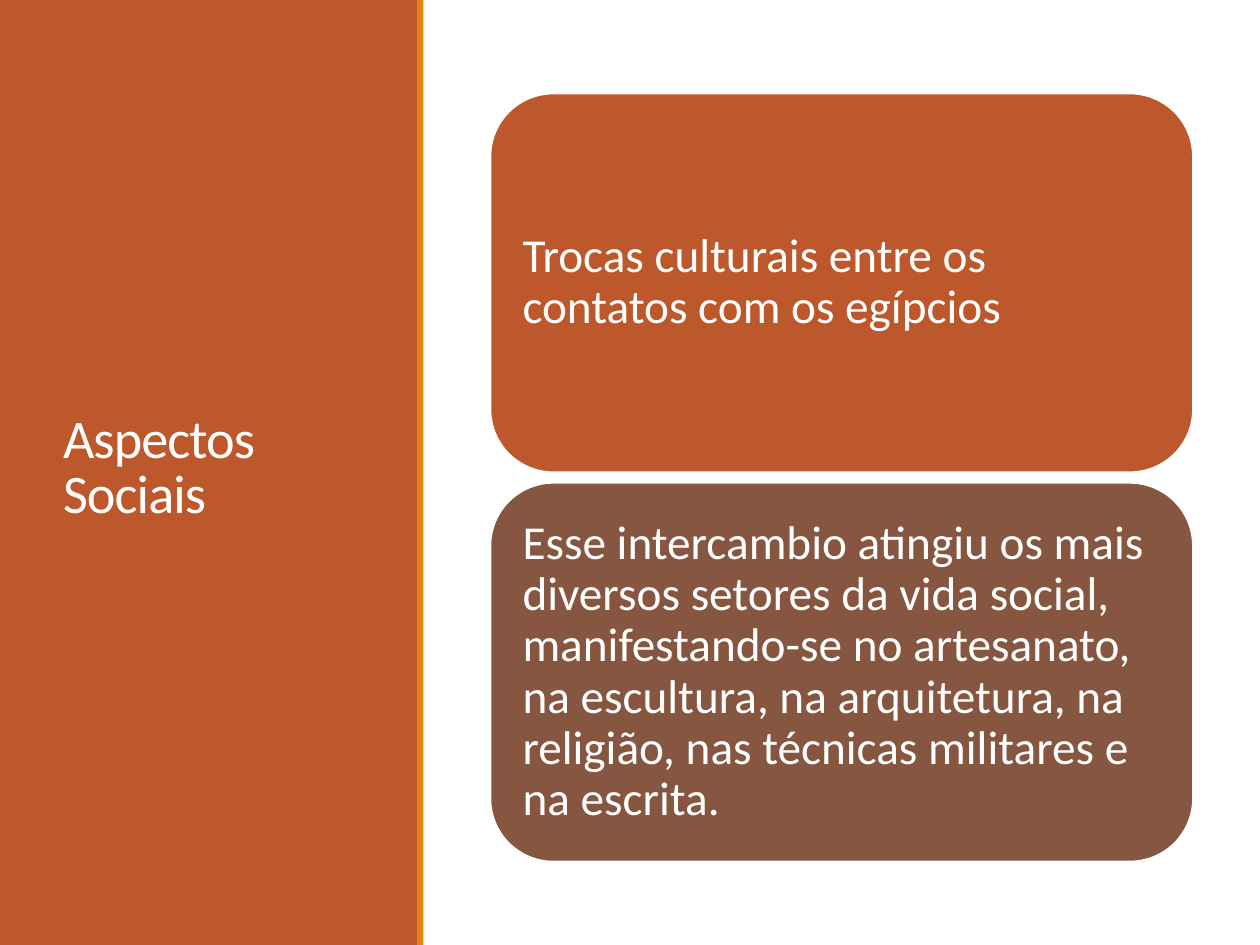
"""Build the slide on social aspects."""
from pptx import Presentation
from pptx.dml.color import RGBColor
from pptx.enum.shapes import MSO_SHAPE
from pptx.enum.text import MSO_ANCHOR, PP_ALIGN
from pptx.util import Inches, Pt

RECT = MSO_SHAPE.RECTANGLE
ROUND = MSO_SHAPE.ROUNDED_RECTANGLE
MIDDLE = MSO_ANCHOR.MIDDLE
LEFT = PP_ALIGN.LEFT

RUST, BROWN, AMBER, WHITE = "BD582C", "865640", "E48312", "FFFFFF"
CARDS = [
    ("Trocas culturais entre os contatos com os egípcios", RUST),
    ("Esse intercambio atingiu os mais diversos setores da vida social, "
     "manifestando-se no artesanato, na escultura, na arquitetura, "
     "na religião, nas técnicas militares e na escrita.", BROWN),
]
CARD_TOP, CARD_HIGH, CARD_GAP = 0.74, 3.01, 0.08


def paint(form, color):
    """Set a fill or font colour from a hex string."""
    form.rgb = RGBColor.from_string(color)


def write(shape, text, size=27, space=0.9, inset=0.1, track=0):
    """Put formatted white text into a shape."""
    frame = shape.text_frame
    frame.word_wrap = True
    frame.vertical_anchor = MIDDLE
    frame.margin_left = frame.margin_right = Inches(inset)
    frame.margin_top = frame.margin_bottom = Inches(inset)
    para = frame.paragraphs[0]
    para.alignment = LEFT
    para.line_spacing = space
    run = para.add_run()
    run.text = text
    run.font.name = "Calibri"
    run.font.size = Pt(size)
    paint(run.font.color, WHITE)
    if track:
        run.font._element.set("spc", str(int(track * 100)))


def add_box(slide, kind, box, color, edge=None):
    """Add a filled shape with an optional outline."""
    shape = slide.shapes.add_shape(kind, *map(Inches, box))
    shape.shadow.inherit = False
    shape.fill.solid()
    paint(shape.fill.fore_color, color)
    if edge:
        paint(shape.line.color, edge)
        shape.line.width = Pt(1.25)
    else:
        shape.line.fill.background()
    return shape


def add_title(slide, text, box):
    """Place and format the title."""
    title = slide.shapes.title
    title.left, title.top, title.width, title.height = map(Inches, box)
    write(title, text, size=31, space=0.85, track=-0.5)
    return title


def main():
    """Build and save the slide."""
    deck = Presentation()
    deck.slide_width, deck.slide_height = Inches(10), Inches(7.5)
    slide = deck.slides.add_slide(deck.slide_layouts[5])

    panel = add_box(slide, RECT, (0, 0, 3.32, 7.5), RUST)
    title = add_title(slide, "Aspectos Sociais", (0.4, 0.57, 2.53, 6.31))
    title.element.addprevious(panel.element)
    add_box(slide, RECT, (3.31, 0, 0.05, 7.5), AMBER)

    for row, (text, color) in enumerate(CARDS):
        top = CARD_TOP + row * (CARD_HIGH + CARD_GAP)
        card = add_box(slide, ROUND, (3.89, top, 5.58, CARD_HIGH), color, WHITE)
        write(card, text, inset=0.11)

    deck.save("out.pptx")


if __name__ == "__main__":
    main()
